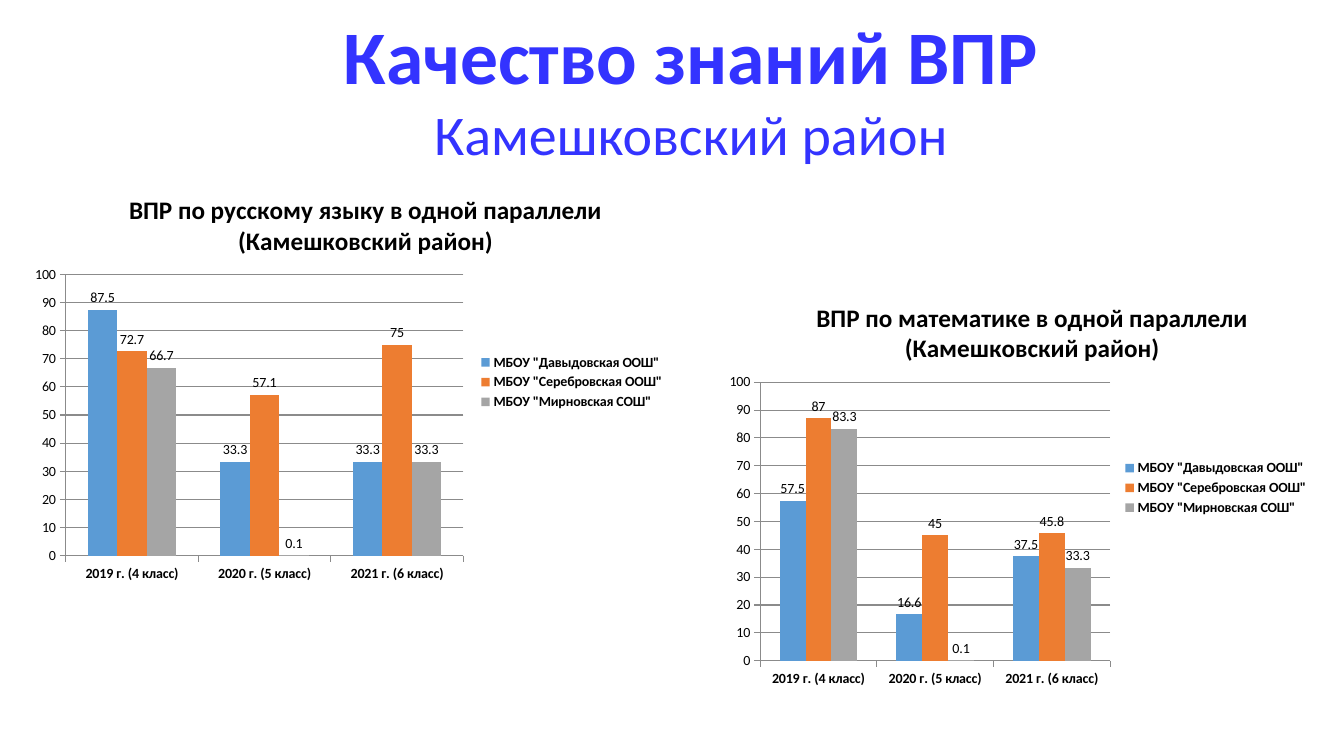
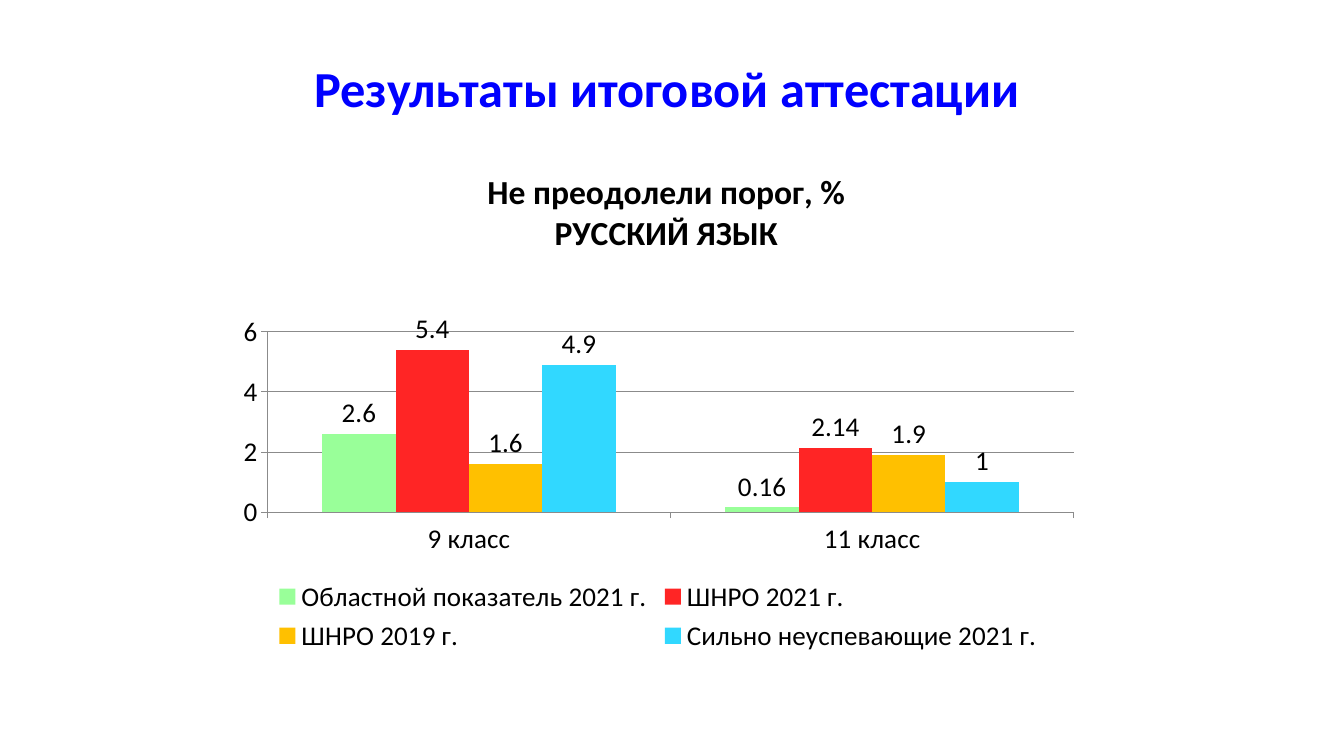
from lxml import etree
from pptx import Presentation
from pptx.chart.data import CategoryChartData
from pptx.dml.color import RGBColor
from pptx.enum.chart import XL_CHART_TYPE as CT, XL_LABEL_POSITION as LABEL
from pptx.enum.chart import XL_LEGEND_POSITION as LEGEND, XL_TICK_MARK as TICK
from pptx.enum.text import MSO_ANCHOR, MSO_AUTO_SIZE, PP_ALIGN
from pptx.oxml.ns import qn
from pptx.util import Pt

FONT = "Calibri"
COLORS = {
    "black": "000000", "axis": "8B8B8B", "title": "3333FF", "result": "0000FF",
    "blue": "5B9BD5", "orange": "ED7D31", "gray": "A5A5A5",
    "green": "99FF99", "red": "FF2525", "amber": "FFC000", "cyan": "31D8FF",
}

# Content; all boxes are left, top, width, height in points on the slide
YEARS = ["2019 г. (4 класс)", "2020 г. (5 класс)", "2021 г. (6 класс)"]
SCHOOLS = [
    ('МБОУ "Давыдовская ООШ"', "blue"),
    ('МБОУ "Серебровская ООШ"', "orange"),
    ('МБОУ "Мирновская СОШ"', "gray"),
]
GROUPS = [
    ("Областной показатель 2021 г.", "green"),
    ("ШНРО 2021 г.", "red"),
    ("ШНРО 2019 г.", "amber"),
    ("Сильно неуспевающие 2021 г.", "cyan"),
]
TEST_STYLE = dict(cats=YEARS, series=SCHOOLS, size=10, title_size=18, top=100,
                  step=10, legend=LEGEND.RIGHT, bold=True)
EXAM_STYLE = dict(cats=["9 класс", "11 класс"], series=GROUPS, size=19.3,
                  title_size=24, top=6, step=2, legend=LEGEND.BOTTOM, bold=False)

SLIDES = [
    dict(
        title=[("Качество знаний ВПР", 54, True), ("Камешковский район", 40, False)],
        color="title", box=(170, 8, 647, 109),
        charts=[
            dict(TEST_STYLE,
                 title=["ВПР по русскому языку в одной параллели", "(Камешковский район)"],
                 values=[(87.5, 33.3, 33.3), (72.7, 57.1, 75), (66.7, 0.1, 33.3)],
                 box=(16, 124, 466, 298), plot=(47, 196, 284, 201), title_at=(90, 136)),
            dict(TEST_STYLE,
                 title=["ВПР по математике в одной параллели", "(Камешковский район)"],
                 values=[(57.5, 16.6, 37.5), (87, 45, 45.8), (83.3, 0.1, 33.3)],
                 box=(511, 201, 431, 295), plot=(543, 273, 250, 199), title_at=(581, 213)),
        ],
    ),
    dict(
        title=[("Результаты итоговой аттестации", 36, True)],
        color="result", box=(215, 37, 523, 51),
        charts=[
            dict(EXAM_STYLE, title=["Не преодолели порог, %", "РУССКИЙ ЯЗЫК"],
                 values=[(2.6, 0.16), (5.4, 2.14), (1.6, 1.9), (4.9, 1)],
                 box=(161, 112, 618, 358), plot=(191, 237, 576, 129), title_at=(346, 120)),
        ],
    ),
]


def rgb(name):
    return RGBColor.from_string(COLORS[name])


def style(font, size, color="black", bold=False):
    font.name, font.size, font.bold = FONT, Pt(size), bold
    font.color.rgb = rgb(color)


def write(tf, lines, color="black"):
    """Fill a text frame with centred (text, size, bold) lines."""
    for i, (text, size, bold) in enumerate(lines):
        p = tf.add_paragraph() if i else tf.paragraphs[0]
        p.alignment = PP_ALIGN.CENTER
        p.space_before = Pt(0)
        r = p.add_run()
        r.text = text
        style(r.font, size, color, bold)


def place(parent, index, box, frame, inner=False):
    """Fix a chart part at box, given as fractions of the chart frame."""
    old = parent.find(qn("c:layout"))
    if old is not None:
        parent.remove(old)
    layout = etree.Element(qn("c:layout"))
    manual = etree.SubElement(layout, qn("c:manualLayout"))
    left, top, width, height = frame
    x, y, *extent = box
    items = [("xMode", "edge"), ("yMode", "edge"),
             ("x", (x - left) / width), ("y", (y - top) / height)]
    if inner:
        items.insert(0, ("layoutTarget", "inner"))
        items += [("w", extent[0] / width), ("h", extent[1] / height)]
    for tag, value in items:
        etree.SubElement(manual, qn(f"c:{tag}")).set("val", str(value))
    parent.insert(index, layout)


def add_column_chart(s, c):
    data = CategoryChartData()
    data.categories = c["cats"]
    for (name, _), values in zip(c["series"], c["values"]):
        data.add_series(name, values)
    chart = s.shapes.add_chart(CT.COLUMN_CLUSTERED, *map(Pt, c["box"]), data).chart
    style(chart.font, c["size"])

    # Title and plot position
    chart.has_title = True
    write(chart.chart_title.text_frame, [(t, c["title_size"], True) for t in c["title"]])
    root = chart.element.find(qn("c:chart"))
    place(root.find(qn("c:title")), 1, c["title_at"], c["box"])
    place(root.find(qn("c:plotArea")), 0, c["plot"], c["box"], inner=True)

    # Legend
    chart.has_legend = True
    chart.legend.position = c["legend"]
    chart.legend.include_in_layout = False
    style(chart.legend.font, c["size"], bold=c["bold"])

    # Axes
    value_axis, cat_axis = chart.value_axis, chart.category_axis
    value_axis.minimum_scale, value_axis.maximum_scale = 0, c["top"]
    value_axis.major_unit = c["step"]
    value_axis.has_major_gridlines = True
    for axis in (value_axis, cat_axis):
        axis.major_tick_mark = TICK.OUTSIDE
    for line in (value_axis.format.line, cat_axis.format.line,
                 value_axis.major_gridlines.format.line):
        line.color.rgb = rgb("axis")
        line.width = Pt(0.75)
    style(value_axis.tick_labels.font, c["size"])
    style(cat_axis.tick_labels.font, c["size"], bold=c["bold"])

    # Columns and their values
    plot = chart.plots[0]
    plot.gap_width, plot.overlap = 150, 0
    plot.vary_by_categories = False
    plot.has_data_labels = True
    labels = plot.data_labels
    labels.show_value = True
    labels.position = LABEL.OUTSIDE_END
    style(labels.font, c["size"])
    for ser, (_, color) in zip(plot.series, c["series"]):
        ser.format.fill.solid()
        ser.format.fill.fore_color.rgb = rgb(color)


def add_title(s, lines, color, box):
    sp = s.shapes.title
    sp.left, sp.top, sp.width, sp.height = map(Pt, box)
    tf = sp.text_frame
    tf.word_wrap = True
    tf.auto_size = MSO_AUTO_SIZE.NONE
    tf.vertical_anchor = MSO_ANCHOR.MIDDLE
    tf.margin_left = tf.margin_right = 0
    write(tf, lines, color)


def main():
    prs = Presentation()
    prs.slide_width, prs.slide_height = Pt(960), Pt(540)
    for content in SLIDES:
        s = prs.slides.add_slide(prs.slide_layouts[5])
        add_title(s, content["title"], content["color"], content["box"])
        for c in content["charts"]:
            add_column_chart(s, c)
    prs.save("out.pptx")


if __name__ == "__main__":
    main()
